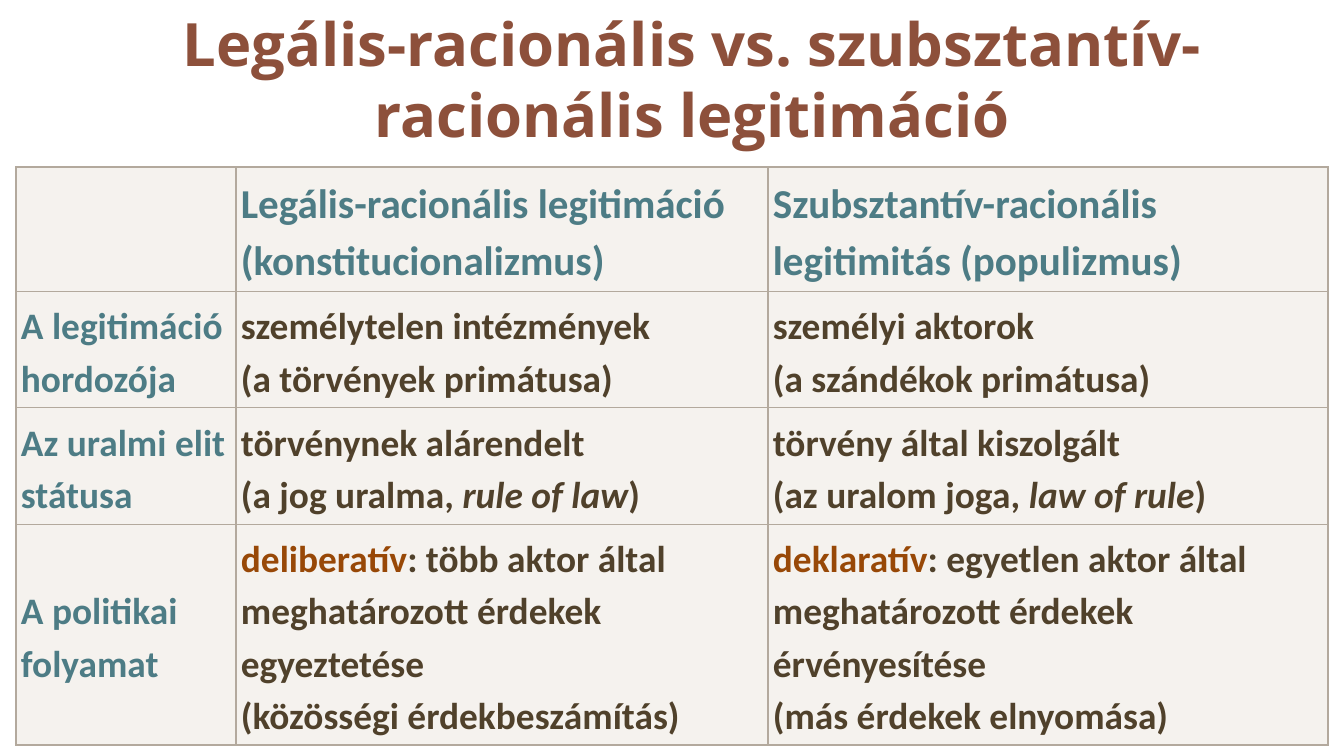
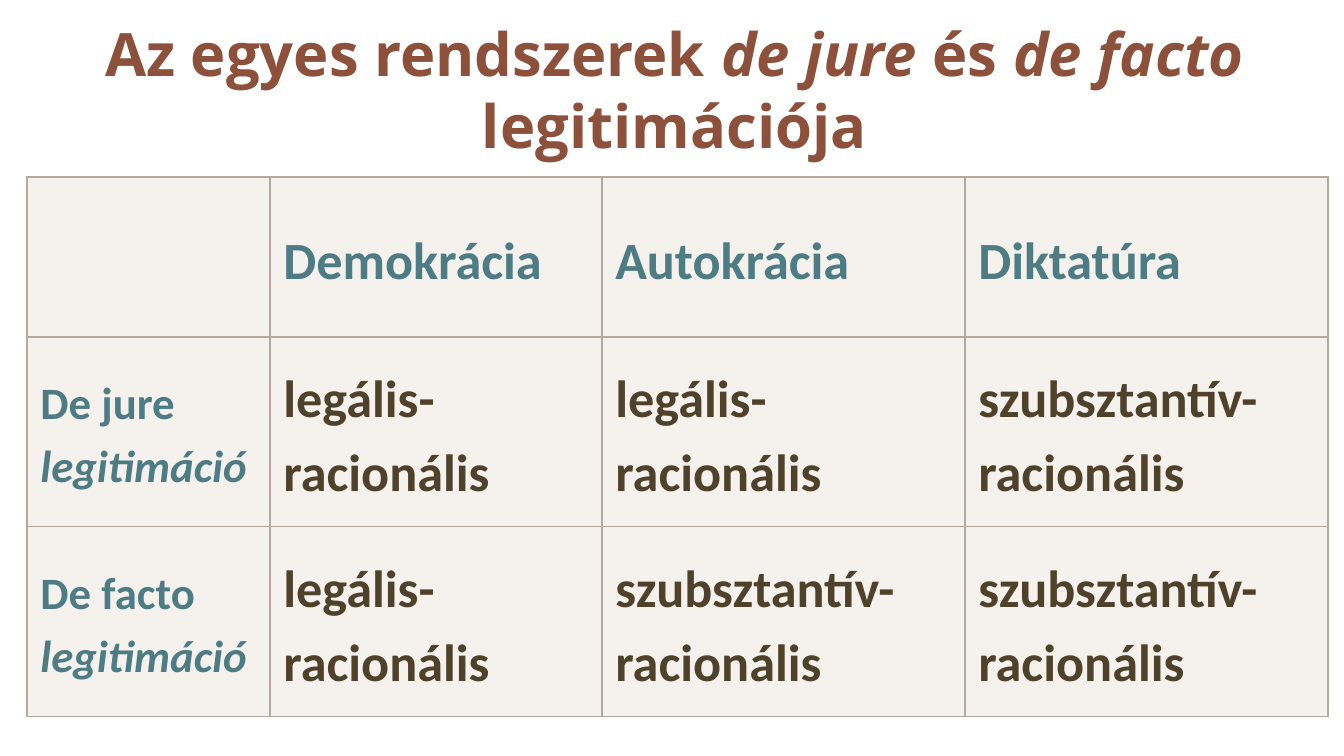
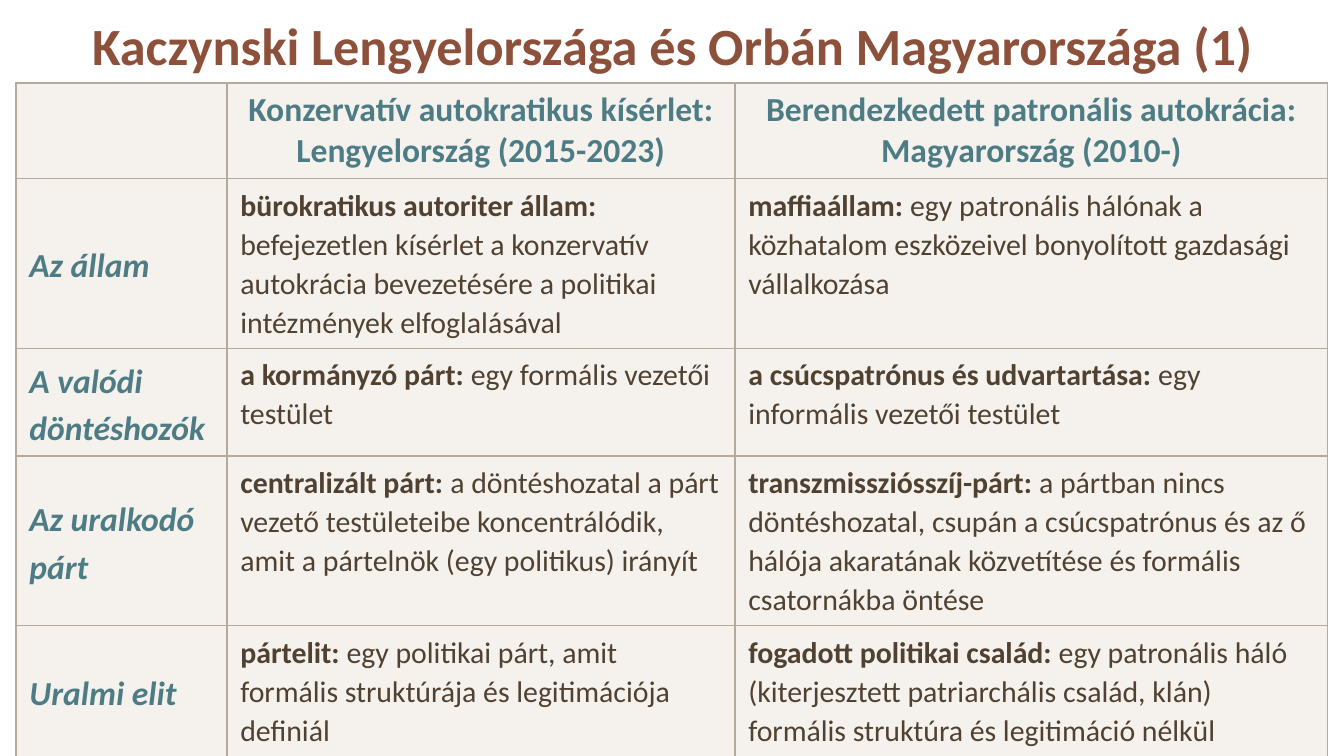
from lxml.etree import SubElement
from pptx import Presentation
from pptx.dml.color import RGBColor
from pptx.enum.text import MSO_ANCHOR as Anchor, MSO_AUTO_SIZE as AutoSize, PP_ALIGN as Align
from pptx.oxml import parse_xml
from pptx.oxml.ns import nsdecls, qn
from pptx.util import Emu, Pt

EMU_PER_PX = 914400 / 134.4
TITLE_ONLY = 5

RUST = "8D503B"
TEAL = "4D7C85"
BROWN = "50412B"
UMBER = "504131"
ORANGE = "984807"
SAND = "EFEAE4"
BORDER = "B3A99D"

TITLE = dict(size=32, font="Open Sans", color=RUST, align=Align.CENTER)
LABEL = dict(size=20, color=TEAL, spacing=1.15)
BODY = dict(size=20, color=BROWN, spacing=1.15)


def px(length):
    return Emu(round(length * EMU_PER_PX))


def rgb(color):
    return RGBColor.from_string(color)


def italic(text):
    return text, dict(slanted=True)


def orange(text):
    return text, dict(color=ORANGE)


def plain(text):
    return text, dict(bold=False)


def add_span(para, text, size, color, font="Calibri", bold=True, slanted=False):
    for index, line in enumerate(text.split("\n")):
        if index:
            para.add_line_break()
        span = para.add_run()
        span.text = line
        span.font.size = Pt(size)
        span.font.name = font
        span.font.bold = bold
        span.font.italic = slanted
        span.font.color.rgb = rgb(color)


def write(frame, paragraphs, align=Align.LEFT, spacing=None, **style):
    for index, spans in enumerate(paragraphs):
        para = frame.add_paragraph() if index else frame.paragraphs[0]
        para.alignment = align
        if spacing:
            para.line_spacing = spacing
        for span in spans:
            text, changes = (span, {}) if isinstance(span, str) else span
            add_span(para, text, **{**style, **changes})


def add_title(page, left, top, width, height, spans, **style):
    title = page.shapes.title
    title.left, title.top, title.width, title.height = map(px, (left, top, width, height))
    frame = title.text_frame
    frame.word_wrap = True
    frame.auto_size = AutoSize.NONE
    frame.vertical_anchor = Anchor.MIDDLE
    write(frame, [spans], **{**TITLE, **style})


def paint_cell(cell, heavy_sides):
    cell.fill.solid()
    cell.fill.fore_color.rgb = rgb(SAND)
    properties = cell._tc.get_or_add_tcPr()
    SubElement(properties.find(".//" + qn("a:srgbClr")), qn("a:alpha"), val="60000")
    for index, side in enumerate("LRTB"):
        width = Pt(1 if side in heavy_sides else 0.75)
        properties.insert(index, parse_xml(
            f'<a:ln{side} {nsdecls("a")} w="{width}"><a:solidFill>'
            f'<a:srgbClr val="{BORDER}"/></a:solidFill></a:ln{side}>'))


def outer_sides(row, column, row_count, column_count):
    edges = {"L": column == 0, "R": column == column_count - 1,
             "T": row == 0, "B": row == row_count - 1}
    return {side for side, at_edge in edges.items() if at_edge}


def add_grid(page, left, top, height, widths, heights, rows, heavy, head, label, body,
             head_anchor=Anchor.MIDDLE, body_anchor=Anchor.MIDDLE, margin=None):
    holder = page.shapes.add_table(len(rows), len(widths), px(left), px(top),
                                   px(sum(widths)), px(height))
    table = holder.table
    table.first_row = table.horz_banding = False
    for column, width in zip(table.columns, widths):
        column.width = px(width)
    for row, row_height in zip(table.rows, heights):
        row.height = px(row_height)
    holder.height = px(height)
    for r, row in enumerate(rows):
        for c, paragraphs in enumerate(row):
            cell = table.cell(r, c)
            paint_cell(cell, outer_sides(r, c, len(rows), len(widths)) & set(heavy))
            if margin:
                cell.margin_left = cell.margin_right = px(margin)
                cell.margin_top = cell.margin_bottom = px(margin)
            if r == 0:
                style, anchor = head, head_anchor
            elif c == 0:
                style, anchor = label, Anchor.MIDDLE
            else:
                style, anchor = body, body_anchor
            cell.vertical_anchor = anchor
            write(cell.text_frame, paragraphs, **style)


def build_legitimacy_page(page):
    rows = [
        [[],
         [["Legális-racionális legitimáció"], ["(konstitucionalizmus)"]],
         [["Szubsztantív-racionális legitimitás (populizmus)"]]],
        [[["A legitimáció hordozója"]],
         [["személytelen intézmények\n(a törvények primátusa)"]],
         [["személyi aktorok\n(a szándékok primátusa)"]]],
        [[["Az uralmi elit státusa"]],
         [["törvénynek alárendelt"], ["(a jog uralma, ", italic("rule of law"), ")"]],
         [["törvény által kiszolgált\n(az uralom joga, ", italic("law of rule"), ")"]]],
        [[["A politikai folyamat"]],
         [[orange("deliberatív"), ": több aktor által meghatározott érdekek egyeztetése"],
          ["(közösségi érdekbeszámítás)"]],
         [[orange("deklaratív"), ": egyetlen aktor által meghatározott érdekek "
           "érvényesítése\n(más érdekek elnyomása)"]]],
    ]
    add_grid(page, 16, 167, 567, [220, 532, 560], [117, 116, 117, 138], rows, "LTRB",
             head={**LABEL, "size": 22}, label=LABEL, body=BODY, margin=5)
    add_title(page, 79, 11, 1227, 134,
              ["Legális-racionális vs. szubsztantív-racionális legitimáció"])


def build_systems_page(page):
    legal = [["legális-racionális"]]
    substantive = [["szubsztantív-racionális"]]
    rows = [
        [[], [["Demokrácia"]], [["Autokrácia"]], [["Diktatúra"]]],
        [[["De jure ", italic("legitimáció")]], legal, legal, substantive],
        [[["De facto"], [italic("legitimáció")]], legal, substantive, substantive],
    ]
    add_grid(page, 27, 177, 540, [243, 332, 363, 363], [160, 190, 190], rows, "LTR",
             head={**LABEL, "size": 28}, label={**LABEL, "size": 24},
             body={**BODY, "size": 28})
    add_title(page, 0, 32, 1349, 113,
              ["Az egyes rendszerek ", italic("de jure "), "és ",
               italic("de facto "), "legitimációja"])


def build_countries_page(page):
    comparisons = [
        ("Az állam",
         "bürokratikus autoriter állam:",
         " befejezetlen kísérlet a konzervatív autokrácia bevezetésére "
         "a politikai intézmények elfoglalásával",
         "maffiaállam:",
         " egy patronális hálónak a közhatalom eszközeivel bonyolított "
         "gazdasági vállalkozása"),
        ("A valódi döntéshozók",
         "a kormányzó párt:",
         " egy formális vezetői testület",
         "a csúcspatrónus és udvartartása:",
         " egy informális vezetői testület"),
        ("Az uralkodó párt",
         "centralizált párt:",
         " a döntéshozatal a párt vezető testületeibe koncentrálódik, "
         "amit a pártelnök (egy politikus) irányít",
         "transzmissziósszíj-párt:",
         " a pártban nincs döntéshozatal, csupán a csúcspatrónus és az ő "
         "hálója akaratának közvetítése és formális csatornákba öntése"),
        ("Uralmi elit",
         "pártelit:",
         " egy politikai párt, amit formális struktúrája és legitimációja definiál",
         "fogadott politikai család:",
         " egy patronális háló (kiterjesztett patriarchális család, klán) "
         "formális struktúra és legitimáció nélkül"),
    ]
    rows = [[[],
             [["Konzervatív autokratikus kísérlet: Lengyelország (2015-2023)"]],
             [["Berendezkedett patronális autokrácia:\nMagyarország (2010-)"]]]]
    for topic, polish_term, polish_text, hungarian_term, hungarian_text in comparisons:
        rows.append([[[topic]],
                     [[polish_term, plain(polish_text)]],
                     [[hungarian_term, plain(hungarian_text)]]])
    add_title(page, 16, 8, 1312, 73,
              ["Kaczynski Lengyelországa és Orbán Magyarországa (1)"],
              size=28, font="Calibri")
    add_grid(page, 16, 83, 653, [211, 508, 593], [34] * len(rows), rows, "LTB",
             head=dict(size=18, color=TEAL, align=Align.CENTER),
             label={**LABEL, "size": 18, "slanted": True},
             body=dict(size=16, color=UMBER, spacing=1.07),
             head_anchor=Anchor.TOP, body_anchor=Anchor.TOP)


def main():
    deck = Presentation()
    deck.slide_width, deck.slide_height = px(1344), px(756)
    for build in (build_legitimacy_page, build_systems_page, build_countries_page):
        build(deck.slides.add_slide(deck.slide_layouts[TITLE_ONLY]))
    deck.save("out.pptx")


if __name__ == "__main__":
    main()
